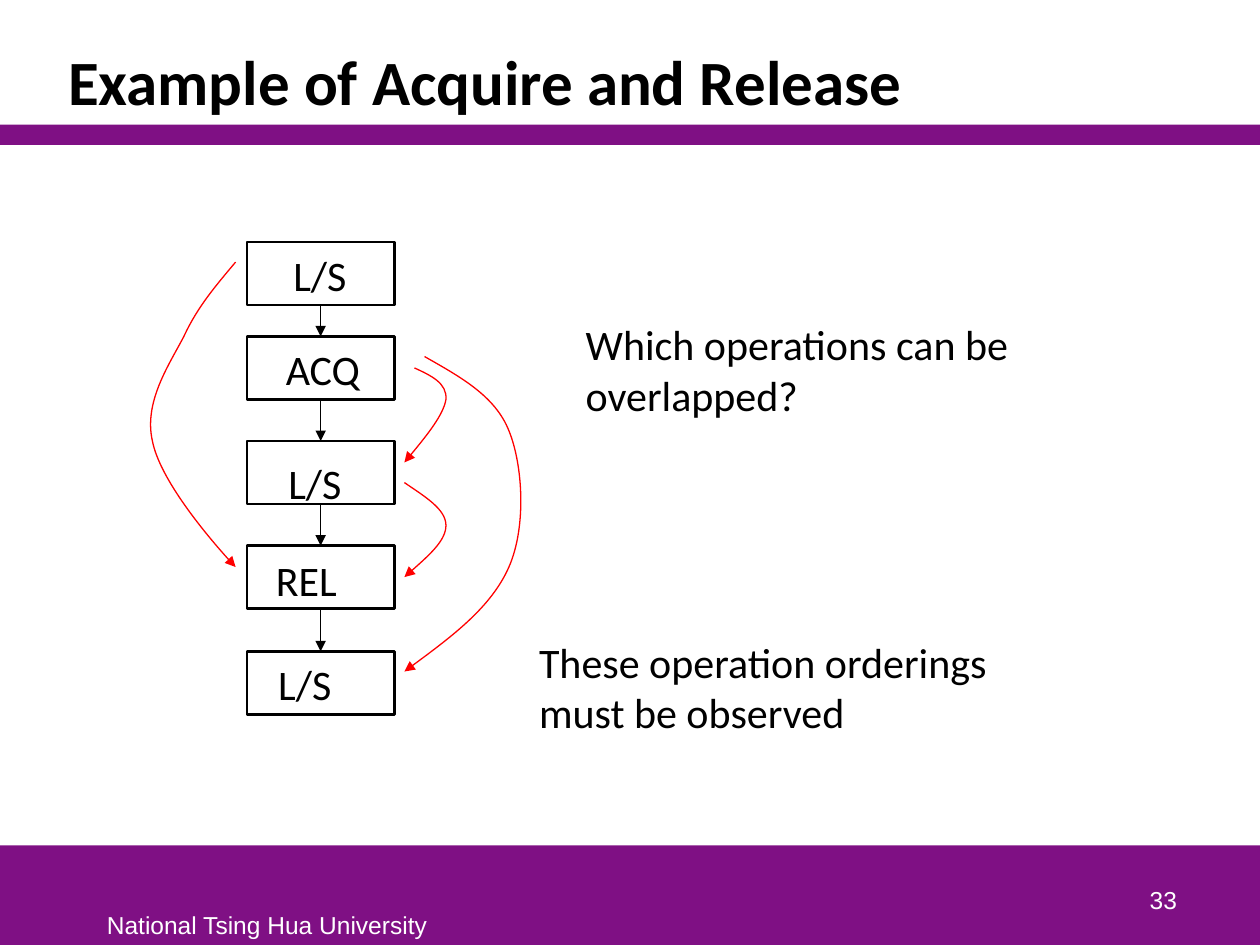
import pptx
import pptx.dml.color
import pptx.enum.shapes
import pptx.enum.text
import pptx.oxml.ns
import pptx.util
from lxml import etree

Inches = pptx.util.Inches
Pt = pptx.util.Pt
qn = pptx.oxml.ns.qn
Anchor = pptx.enum.text.MSO_ANCHOR
Align = pptx.enum.text.PP_ALIGN

PURPLE, BLACK, WHITE, RED = "7F1084", "000000", "FFFFFF", "FF0000"
BOX_LEFT, BOX_WIDTH, BOX_HEIGHT = 1.96, 1.17, 0.5


def color(value):
    return pptx.dml.color.RGBColor.from_string(value)


class SlideBuilder:
    body_font = "Calibri"
    footer_font = "Arial"
    body_size = 24
    footer_size = 14

    def __init__(self, slide):
        self.slide = slide
        self.shapes = slide.shapes

    def add_text_run(self, frame, text, font, size, font_color, bold=False):
        paragraph = frame.paragraphs[0]
        run = paragraph.add_run()
        run.text = text
        run.font.name = font
        run.font.size = Pt(size)
        run.font.bold = bold
        run.font.color.rgb = color(font_color)
        return paragraph

    def title(self, text, left, top, width, height):
        shape = self.shapes.title
        shape.left, shape.top = Inches(left), Inches(top)
        shape.width, shape.height = Inches(width), Inches(height)
        frame = shape.text_frame
        frame.vertical_anchor = Anchor.BOTTOM
        paragraph = self.add_text_run(
            frame, text, self.body_font, 36, BLACK, True)
        paragraph.alignment = Align.LEFT
        paragraph.line_spacing = 0.85

    def text(self, text, left, top, width, height, wrap=True):
        shape = self.shapes.add_textbox(
            Inches(left), Inches(top), Inches(width), Inches(height))
        shape.text_frame.word_wrap = wrap
        self.add_text_run(
            shape.text_frame, text, self.body_font, self.body_size, BLACK)

    def footer(self, text, left, top, width, height,
               align=Align.LEFT, anchor=Anchor.TOP):
        shape = self.shapes.add_textbox(
            Inches(left), Inches(top), Inches(width), Inches(height))
        frame = shape.text_frame
        frame.word_wrap = align == Align.RIGHT
        frame.vertical_anchor = anchor
        paragraph = self.add_text_run(
            frame, text, self.footer_font, self.footer_size, WHITE)
        paragraph.alignment = align

    def rectangle(self, left, top, width, height, fill=None, line=None):
        shape = self.shapes.add_shape(
            pptx.enum.shapes.MSO_SHAPE.RECTANGLE,
            Inches(left), Inches(top), Inches(width), Inches(height))
        shape.shadow.inherit = False
        if fill:
            shape.fill.solid()
            shape.fill.fore_color.rgb = color(fill)
        else:
            shape.fill.background()
        if line:
            shape.line.color.rgb = color(line)
            shape.line.width = Pt(1.5)
        else:
            shape.line.fill.background()

    def finish_arrow(self, shape, line_color):
        shape.line.color.rgb = color(line_color)
        shape.line.width = Pt(0.75)
        line = shape._element.spPr.find(qn("a:ln"))
        etree.SubElement(line, qn("a:tailEnd"), type="triangle")

    def arrow(self, x, start, end):
        connector = self.shapes.add_connector(
            pptx.enum.shapes.MSO_CONNECTOR.STRAIGHT,
            Inches(x), Inches(start), Inches(x), Inches(end))
        self.finish_arrow(connector, BLACK)
        etree.SubElement(connector._element.spPr, qn("a:effectLst"))

    def curve(self, points):
        start, *rest = [(Inches(x), Inches(y)) for x, y in points]
        builder = self.shapes.build_freeform(*start)
        builder.add_line_segments(rest, close=False)
        shape = builder.convert_to_shape()
        shape.shadow.inherit = False
        shape.fill.background()
        self.finish_arrow(shape, RED)
        outline = next(shape._element.iter(qn("a:path")))
        segments = outline.findall(qn("a:lnTo"))
        for first in range(0, len(segments), 3):
            bezier = etree.SubElement(outline, qn("a:cubicBezTo"))
            for segment in segments[first:first + 3]:
                bezier.append(segment[0])
                outline.remove(segment)


def main():
    presentation = pptx.Presentation()
    presentation.slide_width = Inches(10)
    presentation.slide_height = Inches(7.5)
    slide = presentation.slides.add_slide(presentation.slide_layouts[5])
    builder = SlideBuilder(slide)

    builder.rectangle(0, 6.71, 10, 0.79, fill=PURPLE)
    builder.rectangle(0, 0.99, 10, 0.16, fill=PURPLE)
    builder.footer("National Tsing Hua University", 0.75, 7.17, 2.76, 0.33)
    builder.footer("33", 7.36, 6.81, 2.08, 0.5, Align.RIGHT, Anchor.BOTTOM)
    builder.title("Example of Acquire and Release", 0.44, 0.25, 8.97, 0.74)

    operations = [
        ("L/S", 1.92, 2.23, 1.93, 0.63),
        ("ACQ", 2.67, 2.17, 2.68, 0.8),
        ("L/S", 3.5, 2.19, 3.58, 0.63),
        ("REL", 4.33, 2.09, 4.35, 0.69),
        ("L/S", 5.17, 2.11, 5.18, 0.63),
    ]
    for label, box_top, left, top, width in operations:
        builder.text(label, left, top, width, 0.5, wrap=False)
        builder.rectangle(BOX_LEFT, box_top, BOX_WIDTH, BOX_HEIGHT, line=BLACK)
    for upper, lower in zip(operations, operations[1:]):
        builder.arrow(BOX_LEFT + BOX_WIDTH / 2, upper[1] + BOX_HEIGHT, lower[1])

    ordering_curves = [
        [(1.87, 2.08), (1.72, 2.26), (1.57, 2.43), (1.46, 2.67), (1.34, 2.9),
         (1.14, 3.19), (1.21, 3.5), (1.27, 3.81), (1.75, 4.38), (1.87, 4.5)],
        [(3.29, 2.92), (3.42, 2.98), (3.55, 3.04), (3.54, 3.17),
         (3.52, 3.29), (3.37, 3.48), (3.21, 3.67)],
        [(3.21, 3.83), (3.37, 3.94), (3.54, 4.04), (3.54, 4.17),
         (3.54, 4.29), (3.37, 4.44), (3.21, 4.58)],
        [(3.37, 2.83), (3.65, 2.99), (3.93, 3.14), (4.04, 3.42), (4.15, 3.69),
         (4.18, 4.18), (4.04, 4.5), (3.9, 4.82), (3.55, 5.08), (3.21, 5.33)],
    ]
    for points in ordering_curves:
        builder.curve(points)

    builder.text("Which operations can be overlapped?", 4.55, 2.48, 3.73, 0.91)
    builder.text("These operation orderings must be observed", 4.18, 5, 4.37, 0.91)

    presentation.save("out.pptx")


if __name__ == "__main__":
    main()
